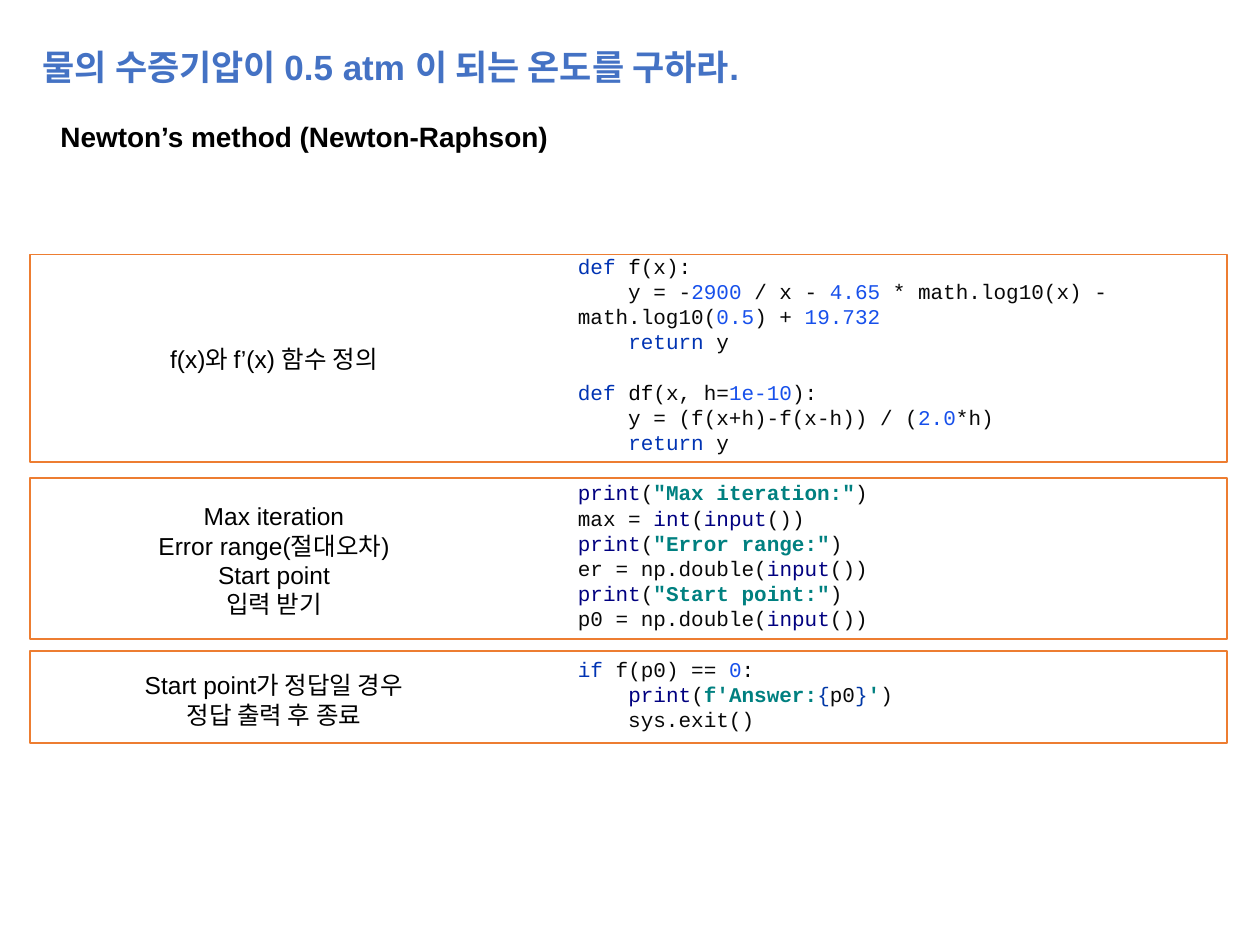
"""Build the slide that explains Newton's method for the vapour pressure of water."""
from dataclasses import dataclass

from pptx import Presentation
from pptx.dml.color import RGBColor
from pptx.enum.shapes import MSO_SHAPE
from pptx.enum.text import PP_ALIGN
from pptx.util import Cm, Pt


@dataclass(frozen=True)
class Theme:
    sans: str = "Arial"
    mono: str = "Courier New"
    title: int = 20
    head: int = 16
    label: int = 14
    code: int = 12
    blue: str = "4472C4"
    black: str = "000000"
    frame: str = "ED7D31"
    plain: str = "080808"
    key: str = "0033B3"
    num: str = "1750EB"
    call: str = "000080"
    quote: str = "008080"
    brace: str = "0037A6"


theme = Theme()
deck = Presentation()
deck.slide_width, deck.slide_height = Cm(25.4), Cm(19.05)
slide = deck.slides.add_slide(deck.slide_layouts[6])


def add_box(left, top, width, height):
    box = slide.shapes.add_textbox(Cm(left), Cm(top), Cm(width), Cm(height))
    box.text_frame.word_wrap = True
    return box.text_frame


def set_lines(frame, lines, size, color, bold=False, align=PP_ALIGN.LEFT):
    frame.text = "\n".join(lines)
    for para in frame.paragraphs:
        para.alignment = align
        para.line_spacing = Pt(size * 1.2)
        para.font.name = theme.sans
        para.font.size = Pt(size)
        para.font.bold = bold
        para.font.color.rgb = RGBColor.from_string(color)


set_lines(add_box(0.61, 0.79, 17.15, 1.19),
          ["물의 수증기압이 0.5 atm 이 되는 온도를 구하라."],
          theme.title, theme.blue, True)
set_lines(add_box(0.97, 2.29, 16.18, 0.94),
          ["Newton’s method (Newton-Raphson)"],
          theme.head, theme.black, True)

steps = [
    (5.13, 4.19, 6.81, 0.86, ["f(x)와 f’(x) 함수 정의"]),
    (9.63, 3.25, 9.98, 2.64,
     ["Max iteration", "Error range(절대오차)", "Start point", "입력 받기"]),
    (13.13, 1.85, 13.39, 1.45,
     ["Start point가 정답일 경우", "정답 출력 후 종료"]),
]
for top, height, text_top, text_height, lines in steps:
    panel = slide.shapes.add_shape(
        MSO_SHAPE.RECTANGLE, Cm(0.61), Cm(top), Cm(24.13), Cm(height))
    panel.shadow.inherit = False
    panel.fill.background()
    panel.line.color.rgb = RGBColor.from_string(theme.frame)
    panel.line.width = Pt(1)
    set_lines(add_box(0.61, text_top, 9.83, text_height), lines,
              theme.label, theme.black, align=PP_ALIGN.CENTER)

plain, key, num = theme.plain, theme.key, theme.num
call, quote, brace = theme.call, theme.quote, theme.brace
back = [("    ", num), ("return ", key), ("y", plain)]
blocks = [
    [
        [("def ", key), ("f", theme.black), ("(x):", plain)],
        [("    y = -", plain), ("2900 ", num), ("/ x - ", plain),
         ("4.65 ", num), ("* math.log10(x) - math.log10(", plain),
         ("0.5", num), (") + ", plain), ("19.732", num)],
        back,
    ],
    [
        [("def ", key), ("df", theme.black), ("(x, h=", plain),
         ("1e-10", num), ("):", plain)],
        [("    y = (f(x+h)-f(x-h)) / (", plain), ("2.0", num),
         ("*h)", plain)],
        back,
    ],
    [],
    [
        [("if ", key), ("f(p0) == ", plain), ("0", num), (":", plain)],
        [("    ", plain), ("print", call), ("(", plain),
         ("f'Answer:", quote), ("{", brace), ("p0", plain), ("}", brace),
         ("'", quote), (")", plain)],
        [("    sys.exit()", plain)],
    ],
]
prompts = [
    ('"Max iteration:"', "max = ", "int"),
    ('"Error range:"', "er = np.", "double"),
    ('"Start point:"', "p0 = np.", "double"),
]
for prompt, target, kind in prompts:
    blocks[2] += [
        [("print", call), ("(", plain), (prompt, quote), (")", plain)],
        [(target, plain), (kind, call if kind == "int" else plain),
         ("(", plain), ("input", call), ("())", plain)],
    ]

code = add_box(11.4, 4.98, 14, 10.52)
para = code.paragraphs[0]
for index, block in enumerate(blocks):
    for row, line in enumerate(block):
        if index or row:
            para = code.add_paragraph()
        if index and not row:
            para.space_before = Pt(theme.code * 1.2)
        para.line_spacing = Pt(theme.code * 1.2)
        para.font.name = theme.mono
        para.font.size = Pt(theme.code)
        for text, color in line:
            run = para.add_run()
            run.text = text
            run.font.color.rgb = RGBColor.from_string(color)
            run.font.bold = color == quote

deck.save("out.pptx")
